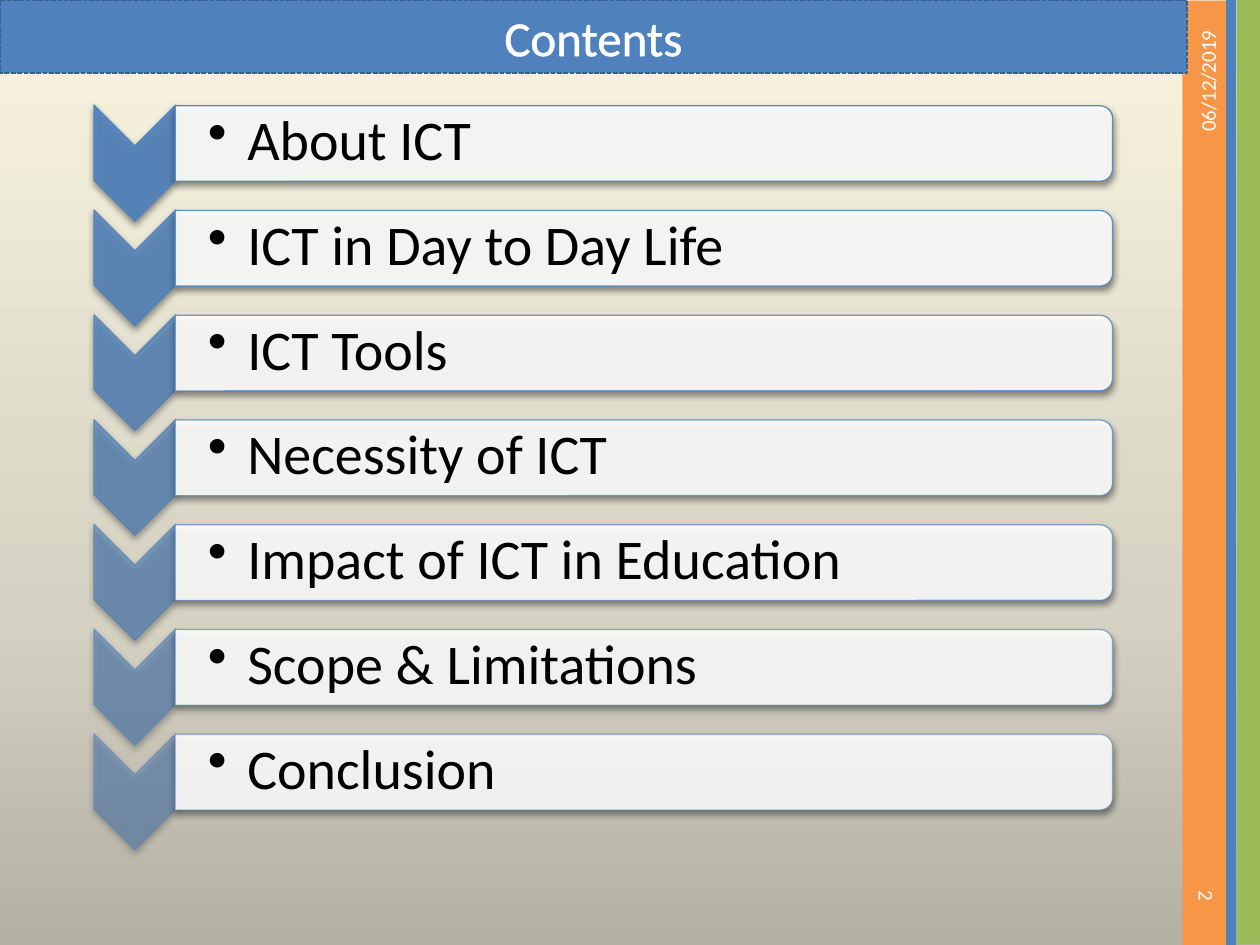
from dataclasses import dataclass

from lxml import etree
from pptx import Presentation
from pptx.dml.color import RGBColor
from pptx.enum.dml import MSO_LINE
from pptx.enum.shapes import MSO_SHAPE
from pptx.enum.text import MSO_ANCHOR, PP_ALIGN
from pptx.oxml.ns import qn
from pptx.util import Pt

RECT, CHEVRON = MSO_SHAPE.RECTANGLE, MSO_SHAPE.CHEVRON
PANEL = MSO_SHAPE.ROUND_2_SAME_RECTANGLE
LEFT, CENTER, RIGHT = PP_ALIGN.LEFT, PP_ALIGN.CENTER, PP_ALIGN.RIGHT
MIDDLE = MSO_ANCHOR.MIDDLE
DASH = MSO_LINE.SQUARE_DOT


@dataclass(frozen=True)
class Theme:
    font: str = "Calibri"
    blue: str = "4F81BD"
    navy: str = "3A5F8C"
    orange: str = "F79646"
    green: str = "9BBB59"
    white: str = "FFFFFF"
    black: str = "000000"
    back: tuple = ((0, "B3B0A4"), (35, "D5D2C3"), (100, "F9F5E0"))
    title: int = 28
    item: int = 32
    small: int = 12


THEME = Theme()
TOPICS = ("About ICT", "ICT in Day to Day Life", "ICT Tools",
          "Necessity of ICT", "Impact of ICT in Education",
          "Scope & Limitations", "Conclusion")
PITCH = 59.87


def node(parent, tag, **attrs):
    return etree.SubElement(parent, qn(tag),
                            {key: str(val) for key, val in attrs.items()})


def tint(parent, color, alpha=100):
    """Add a colour, with its opacity in percent."""
    part = node(parent, "a:srgbClr", val=color)
    if alpha < 100:
        node(part, "a:alpha", val=round(alpha * 1000))


def fade(shape, path, alpha):
    """Set the opacity of a solid colour inside the shape properties."""
    color = shape._element.spPr.find("/".join(qn(tag) for tag in path))
    node(color, "a:alpha", val=round(alpha * 1000))


def block(shapes, kind, box, fill, turn=0):
    shape = shapes.add_shape(kind, *map(Pt, box))
    shape.rotation = turn
    shape.shadow.inherit = False
    shape.fill.solid()
    shape.fill.fore_color.rgb = RGBColor.from_string(fill)
    shape.line.fill.background()
    return shape


def edge(shape, color, width):
    shape.line.color.rgb = RGBColor.from_string(color)
    shape.line.width = Pt(width)


def glass(shapes, kind, box, fill, alpha, rim):
    """Add a see-through piece with a blue rim and a soft shadow below."""
    shape = block(shapes, kind, box, fill, 90)
    edge(shape, THEME.blue, 0.75)
    fade(shape, ("a:solidFill", "a:srgbClr"), alpha)
    fade(shape, ("a:ln", "a:solidFill", "a:srgbClr"), rim)
    effects = shape._element.spPr.find(qn("a:effectLst"))
    shadow = node(effects, "a:outerShdw", blurRad=Pt(4), dist=Pt(2),
                  dir=5400000, rotWithShape=0)
    tint(shadow, THEME.black, 45)


def write(shape, text, size, color, align):
    frame = shape.text_frame
    frame.word_wrap = True
    frame.vertical_anchor = MIDDLE
    frame.text = text
    para = frame.paragraphs[0]
    para.alignment = align
    font = para.runs[0].font
    font.name, font.size = THEME.font, Pt(size)
    font.color.rgb = RGBColor.from_string(color)
    return para


def label(shapes, box, text, size, color, align, turn=0):
    shape = shapes.add_textbox(*map(Pt, box))
    shape.rotation = turn
    return shape.text_frame, write(shape, text, size, color, align)


def backdrop(slide):
    fill = slide.background.fill
    fill.gradient()
    fill.gradient_angle = 90
    stops = next(slide._element.iter(qn("a:gsLst")))
    for stop in list(stops):
        stops.remove(stop)
    for pos, color in THEME.back:
        tint(node(stops, "a:gs", pos=pos * 1000), color)


def side(shapes):
    block(shapes, RECT, (418.3, 257.8, 540, 25.2), THEME.orange, 270)
    block(shapes, RECT, (443.5, 262.8, 540, 13.7), THEME.green, 270)
    block(shapes, RECT, (700.6, 0, 5.8, 540), THEME.blue)
    for box, text, turn in (((606.2, 79.9, 167.8, 28.8), "06/12/2019", 270),
                            ((651.6, 469.4, 76.3, 28.8), "2", 90)):
        label(shapes, box, text, THEME.small, THEME.white, RIGHT, turn)


def banner(shapes):
    shape = block(shapes, RECT, (0, 0, 678.2, 41.8), THEME.blue)
    edge(shape, THEME.navy, 0.9)
    shape.line.dash_style = DASH
    para = write(shape, "Contents", THEME.title, THEME.white, CENTER)
    # Outline of the letters, which comes before their fill
    props = para.runs[0].font._element
    line = node(props, "a:ln", w=Pt(1.45))
    tint(node(line, "a:solidFill"), THEME.white)
    props.insert(0, line)


def topic(shapes, text, drop, alpha):
    glass(shapes, CHEVRON, (43.9, 69.8 + drop, 66.3, 46.8),
          THEME.blue, alpha, alpha)
    glass(shapes, PANEL, (346.3, drop - 185.8, 43.2, 535.7),
          THEME.white, 90, alpha)
    frame, para = label(shapes, (100.8, 61.9 + drop, 533.5, 38.9), text,
                        THEME.item, THEME.black, LEFT)
    frame.margin_left = Pt(18)
    frame.margin_top = frame.margin_right = frame.margin_bottom = Pt(1.6)
    para.level = 1
    para.line_spacing = 0.9
    para.space_after = Pt(4.8)
    props = para._p.get_or_add_pPr()
    props.set("marL", str(Pt(22.5)))
    props.set("indent", str(-Pt(22.5)))
    node(props, "a:buChar", char="•")


def main():
    deck = Presentation()
    deck.slide_width, deck.slide_height = Pt(720), Pt(540)
    slide = deck.slides.add_slide(deck.slide_layouts[6])
    backdrop(slide)
    side(slide.shapes)
    banner(slide.shapes)

    # Topics step down evenly while their blue fades from 90 to 50 percent
    group = slide.shapes.add_group_shape()
    last = len(TOPICS) - 1
    for i, text in enumerate(TOPICS):
        topic(group.shapes, text, i * PITCH, 90 - 40 * i / last)
    deck.save("out.pptx")


if __name__ == "__main__":
    main()
